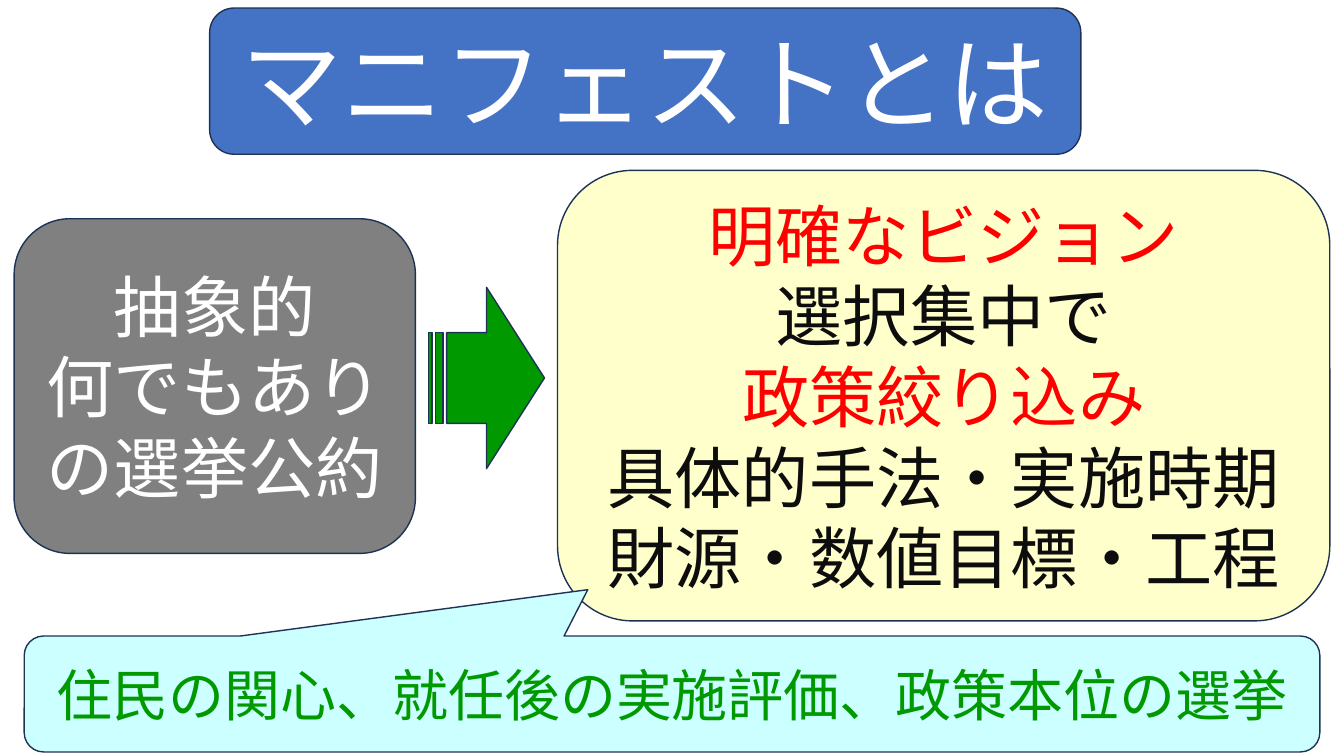
from dataclasses import dataclass

from lxml import etree
from pptx import Presentation
from pptx.dml.color import RGBColor
from pptx.enum.shapes import MSO_SHAPE
from pptx.enum.text import MSO_ANCHOR, PP_ALIGN
from pptx.oxml.ns import qn
from pptx.util import Emu, Pt

ROUNDED = MSO_SHAPE.ROUNDED_RECTANGLE
STRIPED_ARROW = MSO_SHAPE.STRIPED_RIGHT_ARROW
CALLOUT = MSO_SHAPE.ROUNDED_RECTANGULAR_CALLOUT
CENTER = PP_ALIGN.CENTER
MIDDLE = MSO_ANCHOR.MIDDLE

EMU_PER_PX = 9144  # 100 px to the inch
FONT = "Noto Sans CJK JP"
OUTLINE = "1E3256"
WHITE = "FFFFFF"
BLACK = "0D0D0D"
RED = "FF0000"
GREEN = "009900"


@dataclass(frozen=True)
class Line:
    text: str
    color: str


@dataclass(frozen=True)
class Panel:
    kind: MSO_SHAPE
    left: int
    top: int
    width: int
    height: int
    fill: str
    size: int = 48
    lines: tuple[Line, ...] = ()
    adjustments: tuple[float, ...] = ()


PANELS = (
    Panel(ROUNDED, 208, 8, 864, 145, "4472C4", 72,
          (Line("マニフェストとは", WHITE),)),
    Panel(ROUNDED, 14, 217, 398, 332, "808080",
          lines=(Line("抽象的", WHITE), Line("何でもありの選挙公約", WHITE))),
    Panel(ROUNDED, 553, 169, 766, 447, "FFFFCC",
          lines=(
              Line("明確なビジョン", RED),
              Line("選択集中で", BLACK),
              Line("政策絞り込み", RED),
              Line("具体的手法・実施時期", BLACK),
              Line("財源・数値目標・工程", BLACK),
          )),
    Panel(STRIPED_ARROW, 425, 285, 115, 180, GREEN),
    Panel(CALLOUT, 24, 631, 1285, 115, "CCFFFF", 40,
          (Line("住民の関心、就任後の実施評価、政策本位の選挙", GREEN),),
          (-0.065, -0.9, 0.167)),
)


def px(length: int) -> Emu:
    return Emu(length * EMU_PER_PX)


def rgb(color: str) -> RGBColor:
    return RGBColor.from_string(color)


def write_line(paragraph, line: Line, size: int) -> None:
    paragraph.text = line.text
    paragraph.alignment = CENTER
    font = paragraph.font
    font.size = Pt(size)
    font.color.rgb = rgb(line.color)
    font.name = FONT
    properties = paragraph._p.get_or_add_pPr().get_or_add_defRPr()
    etree.SubElement(properties, qn("a:ea"), typeface=FONT)


def draw_panel(slide, panel: Panel) -> None:
    shape = slide.shapes.add_shape(
        panel.kind, px(panel.left), px(panel.top), px(panel.width), px(panel.height))
    shape.shadow.inherit = False
    shape.fill.solid()
    shape.fill.fore_color.rgb = rgb(panel.fill)
    shape.line.color.rgb = rgb(OUTLINE)
    shape.line.width = Pt(1)
    for index, value in enumerate(panel.adjustments):
        shape.adjustments[index] = value

    frame = shape.text_frame
    frame.word_wrap = True
    frame.vertical_anchor = MIDDLE
    for index, line in enumerate(panel.lines):
        paragraph = frame.add_paragraph() if index else frame.paragraphs[0]
        write_line(paragraph, line, panel.size)


def main() -> None:
    presentation = Presentation()
    presentation.slide_width = px(1333)
    presentation.slide_height = px(750)
    slide = presentation.slides.add_slide(presentation.slide_layouts[6])
    for panel in PANELS:
        draw_panel(slide, panel)
    presentation.save("out.pptx")


if __name__ == "__main__":
    main()
